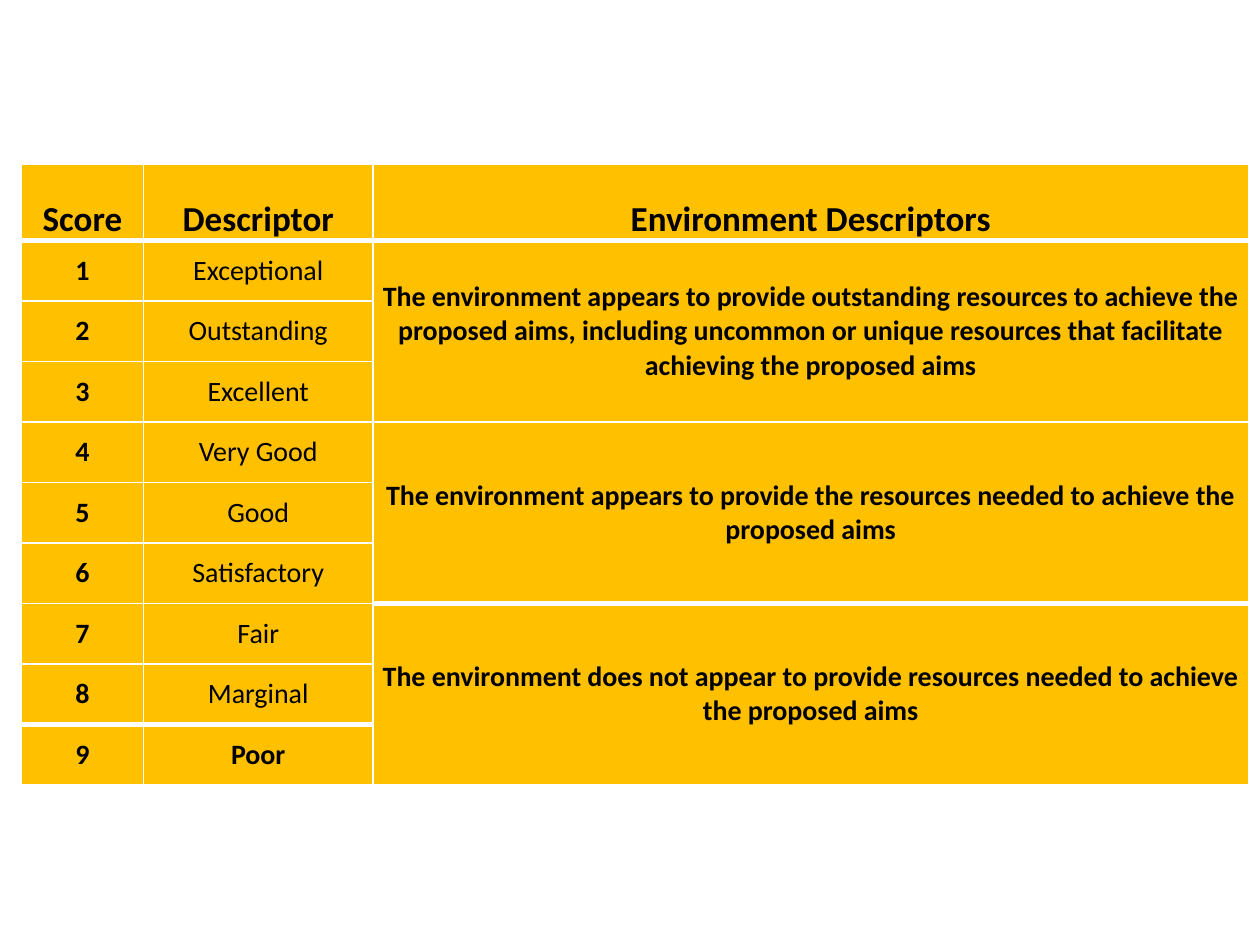
from dataclasses import dataclass

from lxml import etree
from pptx import Presentation
from pptx.dml.color import RGBColor
from pptx.enum.text import MSO_ANCHOR, PP_ALIGN
from pptx.oxml.ns import qn
from pptx.table import Table, _Cell
from pptx.util import Inches, Pt

MIDDLE, BOTTOM = MSO_ANCHOR.MIDDLE, MSO_ANCHOR.BOTTOM
CENTER = PP_ALIGN.CENTER
GOLD, WHITE, BLACK = "FFC000", "FFFFFF", "000000"
COL_WIDTHS = (0.97, 1.82, 6.95)
HEADER_HEIGHT, ROW_HEIGHT = 0.61, 0.48
HEADERS = ("Score", "Descriptor", "Environment Descriptors")
DESCRIPTORS = ("Exceptional", "Outstanding", "Excellent", "Very Good", "Good",
               "Satisfactory", "Fair", "Marginal", "Poor")
ENVIRONMENTS = (
    "The environment appears to provide outstanding resources to achieve the "
    "proposed aims, including uncommon or unique resources that facilitate "
    "achieving the proposed aims",
    "The environment appears to provide the resources needed to achieve the proposed aims",
    "The environment does not appear to provide resources needed to achieve the proposed aims",
)
GROUP_SIZE = len(DESCRIPTORS) // len(ENVIRONMENTS)
THICK_TOPS = {(1, 0), (1, 1), (1, 2), (7, 2), (9, 0), (9, 1)}
CELL_FORMAT = {"margin_left": Inches(0.07), "margin_right": Inches(0.07),
               "margin_top": 0, "margin_bottom": 0}


@dataclass
class Entry:
    """Text of one table cell with its place and look."""
    row: int
    col: int
    text: str
    size: int = 16
    bold: bool = True
    anchor: MSO_ANCHOR = MIDDLE


def rgb(value: str) -> RGBColor:
    """Turn a hex string into a colour."""
    return RGBColor.from_string(value)


def set_borders(cell: _Cell, widths: dict[str, int]) -> None:
    """Put white lines on the edges of a cell, widths in points."""
    tc_pr = cell._tc.get_or_add_tcPr()
    for i, (edge, width) in enumerate(widths.items()):
        ln = etree.Element(qn(f"a:ln{edge}"), w=str(Pt(width)))
        fill = etree.SubElement(ln, qn("a:solidFill"))
        etree.SubElement(fill, qn("a:srgbClr"), val=WHITE)
        tc_pr.insert(i, ln)


def style_cell(table: Table, row: int, col: int) -> None:
    """Give a cell its margins, fill and borders."""
    cell = table.cell(row, col)
    for name, value in CELL_FORMAT.items():
        setattr(cell, name, value)
    cell.fill.solid()
    cell.fill.fore_color.rgb = rgb(GOLD)
    top, bottom = (3 if (r, col) in THICK_TOPS else 1 for r in (row, row + 1))
    set_borders(cell, {"L": 1, "R": 1, "T": top, "B": bottom})


def write_entry(table: Table, entry: Entry) -> None:
    """Write centred text into a cell."""
    cell = table.cell(entry.row, entry.col)
    cell.vertical_anchor = entry.anchor
    p = cell.text_frame.paragraphs[0]
    p.alignment = CENTER
    r = p.add_run()
    r.text = entry.text
    font = {"name": "Calibri", "size": Pt(entry.size), "bold": entry.bold}
    for name, value in font.items():
        setattr(r.font, name, value)
    r.font.color.rgb = rgb(BLACK)


def main() -> None:
    """Build the slide with the score table."""
    prs = Presentation()
    prs.slide_width, prs.slide_height = Inches(10), Inches(7.5)
    s = prs.slides.add_slide(prs.slide_layouts[6])
    heights = [HEADER_HEIGHT] + [ROW_HEIGHT] * len(DESCRIPTORS)
    table = s.shapes.add_table(
        len(heights), len(COL_WIDTHS), Inches(0.17), Inches(1.3),
        Inches(sum(COL_WIDTHS)), Inches(sum(heights))).table
    for column, width in zip(table.columns, COL_WIDTHS):
        column.width = Inches(width)
    for i, height in enumerate(heights):
        table.rows[i].height = Inches(height)
        for col in range(len(COL_WIDTHS)):
            style_cell(table, i, col)

    entries = [Entry(0, c, text, 20, anchor=BOTTOM) for c, text in enumerate(HEADERS)]
    for score, text in enumerate(DESCRIPTORS, 1):
        entries.append(Entry(score, 0, str(score)))
        entries.append(Entry(score, 1, text, bold=text == "Poor"))
    for i, text in enumerate(ENVIRONMENTS):
        first = 1 + i * GROUP_SIZE
        table.cell(first, 2).merge(table.cell(first + GROUP_SIZE - 1, 2))
        entries.append(Entry(first, 2, text))
    for entry in entries:
        write_entry(table, entry)
    prs.save("out.pptx")


if __name__ == "__main__":
    main()
